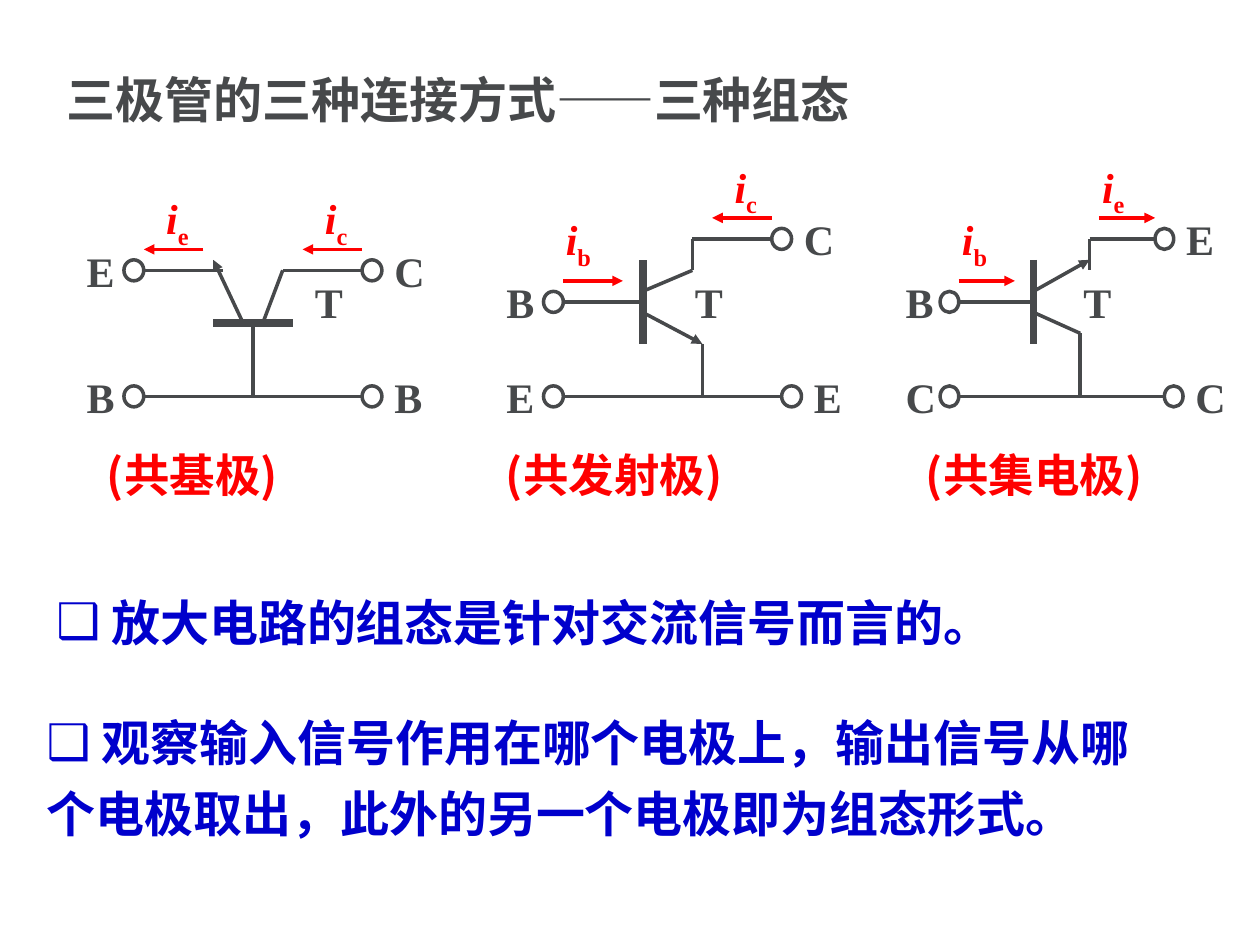
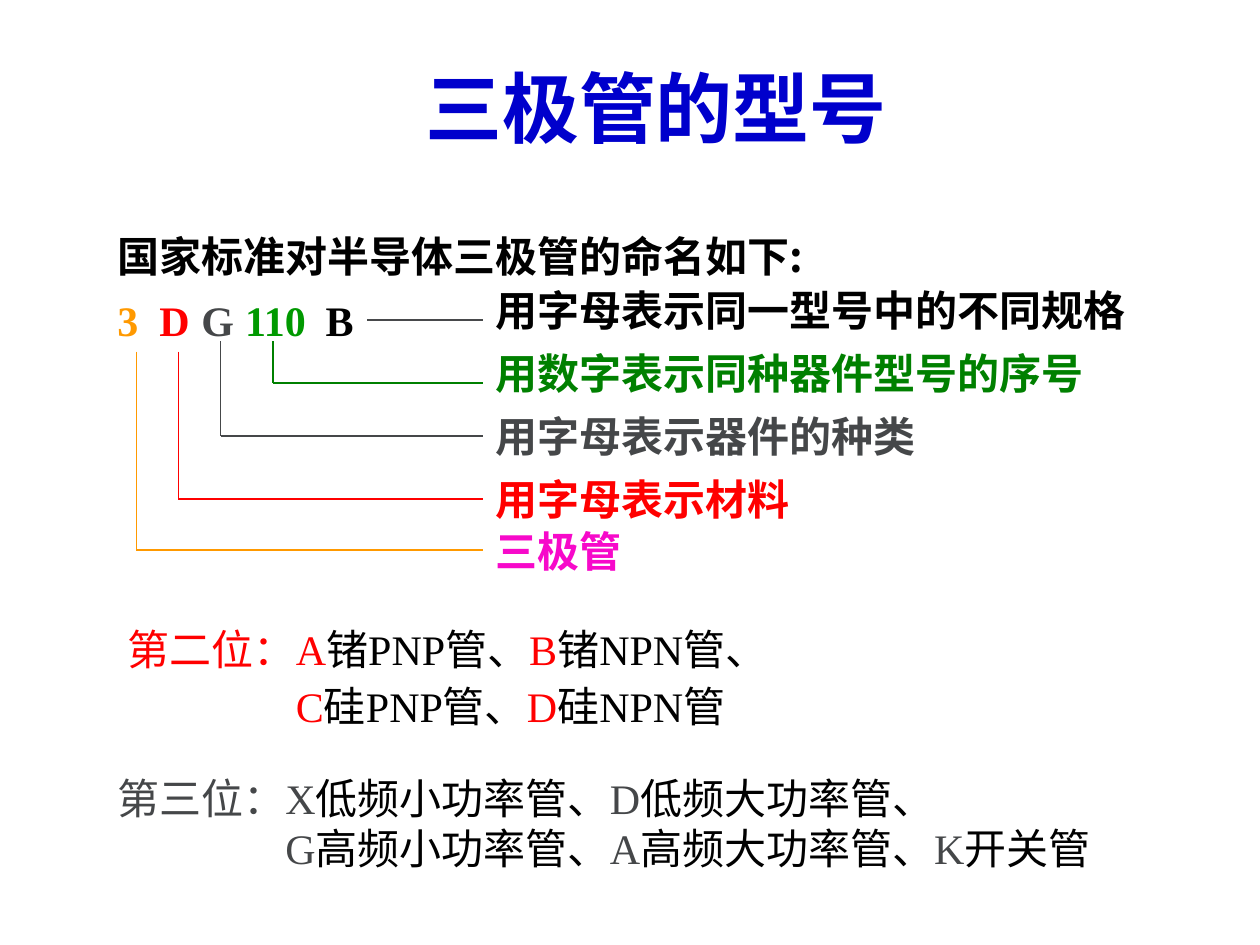
from lxml.etree import SubElement
from pptx import Presentation
from pptx.dml.color import RGBColor
from pptx.enum.shapes import MSO_CONNECTOR as Connector, MSO_SHAPE as Shape
from pptx.enum.text import MSO_ANCHOR as Anchor, MSO_AUTO_SIZE as AutoSize, PP_ALIGN as Align
from pptx.oxml.ns import qn
from pptx.util import Pt

SERIF, SANS = "Times New Roman", "Noto Sans CJK SC"
GRAY, SLATE, BLACK, RED = "47494B", "454749", "000000", "FF0000"
BLUE, ORANGE, GREEN, LIME, PINK = "0000CC", "FF9900", "008000", "009900", "F709CA"

MODES_TITLE = "三极管的三种连接方式——三种组态"
MODES_POINTS = [
    (" 放大电路的组态是针对交流信号而言的。", (25, 331.5, 640, 41)),
    (" 观察输入信号作用在哪个电极上，输出信号从哪个电极取出，此外的另一个电极即为组态形式。",
     (19.5, 397, 660, 88)),
]
POINT_PITCH = 40.3
GRID_TOP, ROW_HEIGHT = 88.5, 6
CIRCUITS = [
    {
        "caption": ("(共基极)", 54), "left": 42.5, "column": 5.67,
        "terminals": [("E", 6, 11), ("C", 30, 11), ("B", 6, 23), ("B", 30, 23)],
        "wires": [(7, 11, 15, 11), (21, 11, 29, 11), (7, 23, 29, 23),
                  (18, 16, 18, 23), (19, 16, 21, 11)],
        "base": (14, 16, 22, 16), "emitter": (17, 16, 14, 10), "name": (23, 11),
        "currents": [("e", (13, 9, 7, 9), (8, 3)), ("c", (29, 9, 23, 9), (24, 3))],
    },
    {
        "caption": ("(共发射极)", 282), "left": 282.25, "column": 5.67,
        "terminals": [("B", 6, 14), ("C", 29, 8), ("E", 6, 23), ("E", 30, 23)],
        "wires": [(7, 14, 15, 14), (15, 13, 20, 11), (20, 8, 20, 11),
                  (20, 8, 28, 8), (21, 18, 21, 23), (7, 23, 29, 23)],
        "base": (15, 18, 15, 10), "emitter": (15, 15, 21, 18), "name": (19, 11),
        "currents": [("b", (7, 12, 13, 12), (6, 5)), ("c", (28, 6, 22, 6), (23, 0))],
    },
    {
        "caption": ("(共集电极)", 522), "left": 510.5, "column": 5.34,
        "terminals": [("B", 6, 14), ("E", 29, 8), ("C", 6, 23), ("C", 30, 23)],
        "wires": [(7, 14, 15, 14), (15, 15, 20, 17), (21, 8, 21, 11),
                  (21, 8, 28, 8), (20, 17, 20, 23), (7, 23, 29, 23)],
        "base": (15, 10, 15, 18), "emitter": (15, 13, 21, 10), "name": (19, 11),
        "currents": [("b", (7, 12, 13, 12), (6, 5)), ("e", (22, 6, 28, 6), (21, 0))],
    },
]

MODEL_TITLE = "三极管的型号"
MODEL_INTRO = "国家标准对半导体三极管的命名如下:"
MODEL_CODE = [("3", ORANGE, 60), ("D", RED, 84), ("G", SLATE, 108),
              ("110", LIME, 133), ("B", BLACK, 179)]
CODE_TOP = 164.5
MEANING_LEFT = 276
# Each row: text, its colour, box top, line colour, line x, line start, corner y
MEANINGS = [
    ("用字母表示同一型号中的不同规格", BLACK, 159, GRAY, 210, 183, 183),
    ("用数字表示同种器件型号的序号", GREEN, 195, GREEN, 156, 195, 219),
    ("用字母表示器件的种类", SLATE, 231, SLATE, 126, 195, 249),
    ("用字母表示材料", RED, 267, RED, 102, 201, 285),
    ("三极管", PINK, 297, ORANGE, 78, 201, 314.5),
]
POSITIONS = [
    ((66, 349, 624, 70), RED, 32.6, [
        ["第二位：A", "锗PNP管、", "B", "锗NPN管、"],
        ["C", "硅PNP管、", "D", "硅NPN管"]]),
    ((60, 438.5, 630, 65.5), SLATE, 28.4, [
        ["第三位：X", "低频小功率管、", "D", "低频大功率管、"],
        ["G", "高频小功率管、", "A", "高频大功率管、", "K", "开关管"]]),
]
POSITION_INDENT = 96


def color(value):
    """Turn a hex string into a colour."""
    return RGBColor.from_string(value)


def style(run, fill, size=24, face=SERIF, bold=True):
    """Format one run, with the sans face for its East Asian text."""
    font = run.font
    font.size, font.bold = Pt(size), bold
    font.color.rgb = color(fill)
    font.name = face
    SubElement(run._r.get_or_add_rPr(), qn("a:ea"), typeface=SANS)


def add_runs(paragraph, parts, **options):
    """Append coloured runs to a paragraph."""
    for text, fill in parts:
        run = paragraph.add_run()
        run.text = text
        style(run, fill, **options)


def lay_out(paragraph, line_spacing, bullet=None, margin=0):
    """Set the line spacing, left margin and bullet."""
    paragraph.line_spacing = line_spacing
    paragraph.space_before = Pt(0)
    properties = paragraph._p.get_or_add_pPr()
    properties.set("marL", str(int(Pt(margin))))
    properties.set("indent", "0")
    if bullet:
        SubElement(properties, qn("a:buChar"), char=bullet)
    else:
        SubElement(properties, qn("a:buNone"))


def place(shape, box, anchor=Anchor.TOP):
    """Move a text shape and let its text wrap."""
    shape.left, shape.top, shape.width, shape.height = map(Pt, box)
    frame = shape.text_frame
    frame.word_wrap = True
    frame.auto_size = AutoSize.NONE
    frame.vertical_anchor = anchor
    return frame


def add_text(slide, box, parts, anchor=Anchor.TOP, **options):
    """Add a text box with one paragraph of coloured runs."""
    frame = place(slide.shapes.add_textbox(0, 0, 0, 0), box, anchor)
    add_runs(frame.paragraphs[0], parts, **options)
    return frame


def set_title(slide, text, box, align, fill, line_spacing=1.0, **options):
    """Fill the title placeholder."""
    frame = place(slide.shapes.title, box, Anchor.MIDDLE)
    frame.text = text
    paragraph = frame.paragraphs[0]
    paragraph.alignment, paragraph.line_spacing = align, line_spacing
    style(paragraph.runs[0], fill, **options)


def add_line(slide, ends, fill, width, arrow=False):
    """Draw a straight line, with an arrowhead at its end if asked."""
    line = slide.shapes.add_connector(Connector.STRAIGHT, *map(Pt, ends))
    line.line.color.rgb = color(fill)
    line.line.width = Pt(width)
    if arrow:
        SubElement(line.line._get_or_add_ln(), qn("a:tailEnd"), type="triangle")
    SubElement(line._element.spPr, qn("a:effectLst"))


def draw_circuit(slide, circuit):
    """Draw one transistor connection on its grid."""
    column = circuit["column"]

    def point(x, y):
        return circuit["left"] + x * column, GRID_TOP + y * ROW_HEIGHT

    def wire(ends, fill=GRAY, width=2, arrow=False):
        add_line(slide, point(*ends[:2]) + point(*ends[2:]), fill, width, arrow)

    def label(x, y, columns=5):
        return (*point(x, y), columns * column, 6 * ROW_HEIGHT)

    for ends in circuit["wires"]:
        wire(ends)
    wire(circuit["base"], width=4.5)
    wire(circuit["emitter"], arrow=True)
    for letter, x, y in circuit["terminals"]:
        box = (*point(x - 1, y - 1), 2 * column, 2 * ROW_HEIGHT)
        terminal = slide.shapes.add_shape(Shape.OVAL, *map(Pt, box))
        terminal.shadow.inherit = False
        terminal.fill.background()
        terminal.line.color.rgb = color(GRAY)
        terminal.line.width = Pt(2)
        label_x = x - 6 if x < 15 else x + 1
        add_text(slide, label(label_x, y - 3), [(letter, GRAY)])
    add_text(slide, label(*circuit["name"]), [("T", GRAY)])
    for subscript, ends, corner in circuit["currents"]:
        wire(ends, RED, arrow=True)
        frame = add_text(slide, label(*corner, 7), [("i", RED), (subscript, RED)])
        symbol, index = frame.paragraphs[0].runs
        symbol.font.italic = True
        index.font._element.set("baseline", "-25000")
    caption, left = circuit["caption"]
    add_text(slide, (left, 252, 186, 38), [(caption, RED)], Anchor.MIDDLE, size=26, face=SANS)


def build_modes(presentation):
    """Build the slide on the three connections."""
    slide = presentation.slides.add_slide(presentation.slide_layouts[3])
    set_title(slide, MODES_TITLE, (31, 36, 648, 41), Align.JUSTIFY, GRAY, size=28)
    for circuit in CIRCUITS:
        draw_circuit(slide, circuit)
    for index, (text, box) in enumerate(MODES_POINTS, 1):
        frame = place(slide.placeholders[index], box, Anchor.MIDDLE)
        frame.text = text
        paragraph = frame.paragraphs[0]
        lay_out(paragraph, Pt(POINT_PITCH), bullet="❑")
        style(paragraph.runs[0], BLUE, size=28)


def build_model(presentation):
    """Build the slide on transistor model numbers."""
    slide = presentation.slides.add_slide(presentation.slide_layouts[1])
    set_title(slide, MODEL_TITLE, (51, 34, 648, 60.5), Align.CENTER, BLUE, 0.9, size=44, face=SANS)
    frame = place(slide.placeholders[1], (60, 128, 618, 42))
    frame.text = MODEL_INTRO
    intro = frame.paragraphs[0]
    lay_out(intro, 1.0)
    style(intro.runs[0], BLACK, face=SANS)
    for text, fill, left in MODEL_CODE:
        add_text(slide, (left, CODE_TOP, 20 + 12 * len(text), 36), [(text, fill)])
    for text, fill, top, line_fill, x, start, corner in MEANINGS:
        if start < corner:
            add_line(slide, (x, start, x, corner), line_fill, 1)
        add_line(slide, (x, corner, MEANING_LEFT, corner), line_fill, 1)
        add_text(slide, (MEANING_LEFT, top, 384, 36), [(text, fill)], face=SANS)
    for box, key_fill, pitch, rows in POSITIONS:
        frame = place(slide.shapes.add_textbox(0, 0, 0, 0), box)
        for index, row in enumerate(rows):
            paragraph = frame.add_paragraph() if index else frame.paragraphs[0]
            lay_out(paragraph, Pt(pitch), margin=POSITION_INDENT * index)
            parts = [(text, BLACK if part % 2 else key_fill) for part, text in enumerate(row)]
            add_runs(paragraph, parts, bold=False)


def main():
    """Build and save the presentation."""
    presentation = Presentation()
    presentation.slide_width, presentation.slide_height = Pt(720), Pt(540)
    build_modes(presentation)
    build_model(presentation)
    presentation.save("out.pptx")


if __name__ == "__main__":
    main()
